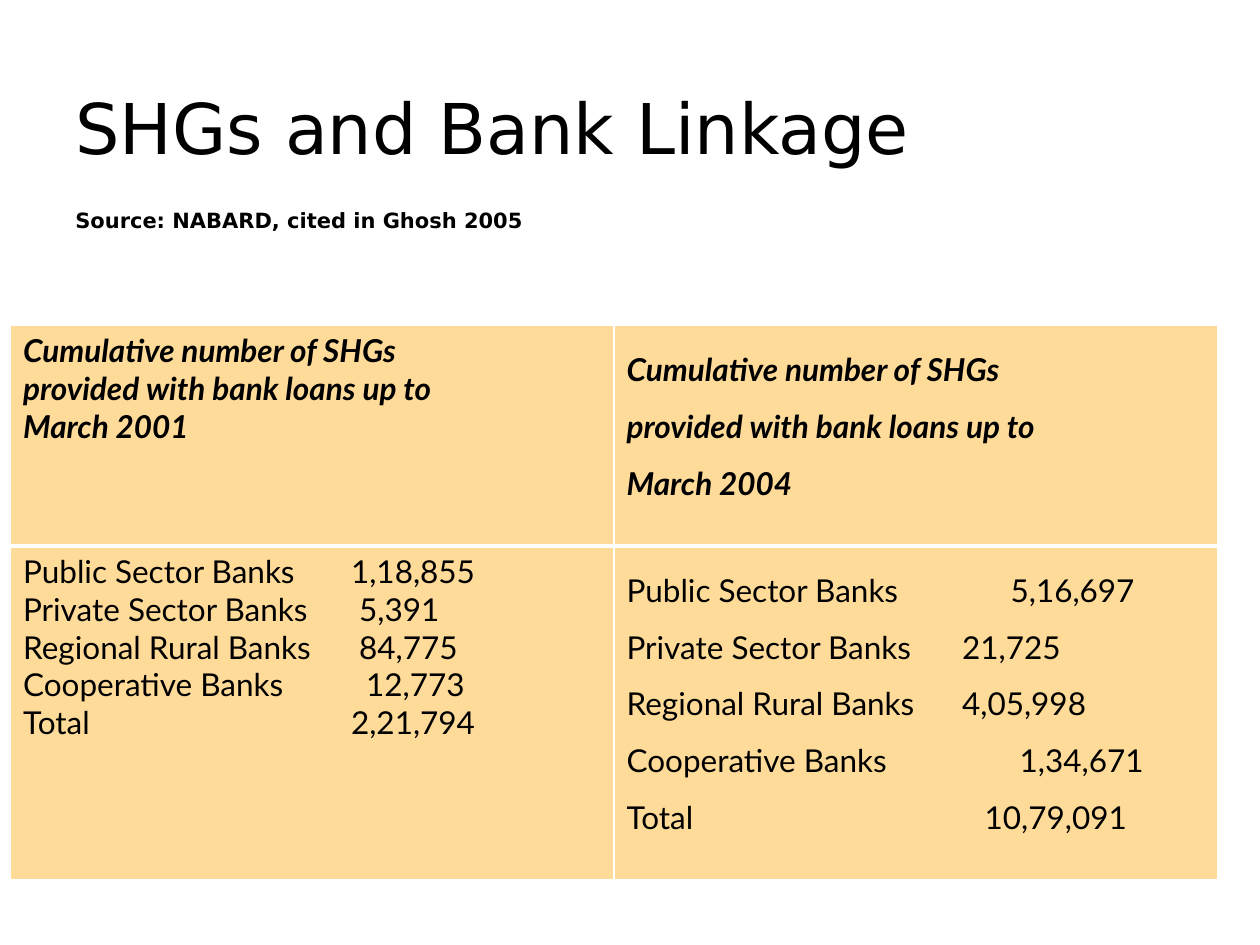
from pptx import Presentation, util as u
from pptx.dml.color import RGBColor
from pptx.enum import text
from pptx.oxml.ns import qn
from lxml import etree

Pt = u.Pt
COLORS = {"ink": "000000", "cell": "FFDB99", "border": "FFFFFF"}

# Content: each data row is label, value, tab position
TITLE = "SHGs and Bank Linkage"
SOURCE = "Source: NABARD, cited in Ghosh 2005"
HEADING = ["Cumulative number of SHGs", "provided with bank loans up to"]
COLUMNS = [
    {"year": "March 2001", "spacing": 1.0, "banks": [
        ("Public Sector Banks", "1,18,855", 187.4),
        ("Private Sector Banks", "5,391", 192),
        ("Regional Rural Banks", "84,775", 192),
        ("Cooperative Banks", "12,773", 196),
        ("Total", "2,21,794", 187.4)]},
    {"year": "March 2004", "spacing": 1.5, "banks": [
        ("Public Sector Banks", "5,16,697", 219.4),
        ("Private Sector Banks", "21,725", 191.7),
        ("Regional Rural Banks", "4,05,998", 191.7),
        ("Cooperative Banks", "1,34,671", 224.6),
        ("Total", "10,79,091", 204.6)]},
]
COL_WIDTH = 344.88
ROW_HEIGHTS = [126, 190.8]


def write(tf, words, first=False, size=18, font="Lato", bold=False,
          italic=False, spacing=None, before=None, tab=None):
    p = tf.paragraphs[0] if first else tf.add_paragraph()
    if spacing:
        p.line_spacing = spacing
    if before:
        p.space_before = Pt(before)
    if tab:
        stops = etree.SubElement(p._p.get_or_add_pPr(), qn("a:tabLst"))
        etree.SubElement(stops, qn("a:tab"), pos=str(Pt(tab)), algn="l")
    r = p.add_run()
    r.text = words
    f = r.font
    f.size, f.name, f.bold, f.italic = Pt(size), font, bold, italic
    f.color.rgb = RGBColor.from_string(COLORS["ink"])


def style_cell(cell, widths):
    tc_pr = cell._tc.get_or_add_tcPr()
    for side, width in zip("LRTB", widths):
        ln = etree.SubElement(tc_pr, qn("a:ln" + side), w=str(Pt(width)))
        fill = etree.SubElement(ln, qn("a:solidFill"))
        etree.SubElement(fill, qn("a:srgbClr"), val=COLORS["border"])
    cell.fill.solid()
    cell.fill.fore_color.rgb = RGBColor.from_string(COLORS["cell"])


prs = Presentation()
prs.slide_width, prs.slide_height = Pt(720), Pt(540)
s = prs.slides.add_slide(prs.slide_layouts[6])

# Title and source
sp = s.shapes.add_textbox(Pt(36), Pt(16.56), Pt(648), Pt(133.92))
tf = sp.text_frame
tf.word_wrap = True
tf.vertical_anchor = text.MSO_ANCHOR.TOP
tf.margin_top = Pt(32)
write(tf, TITLE, first=True, size=40, font="DejaVu Sans")
write(tf, SOURCE, size=12, font="DejaVu Sans", bold=True, before=22)

# Table of bank loans
table = s.shapes.add_table(2, 2, Pt(6), Pt(186), Pt(2 * COL_WIDTH),
                           Pt(sum(ROW_HEIGHTS))).table
for row, height in zip(table.rows, ROW_HEIGHTS):
    row.height = Pt(height)
for c, column in enumerate(COLUMNS):
    table.columns[c].width = Pt(COL_WIDTH)
    head, body = table.cell(0, c), table.cell(1, c)
    style_cell(head, (1, 1, 1, 3))
    style_cell(body, (1, 1, 3, 1))
    for i, line in enumerate(HEADING + [column["year"]]):
        write(head.text_frame, line, first=i == 0, bold=True, italic=True,
              spacing=column["spacing"])
    for i, (label, value, tab) in enumerate(column["banks"]):
        write(body.text_frame, f"{label}\t{value}", first=i == 0,
              spacing=column["spacing"], tab=tab)

prs.save("out.pptx")
